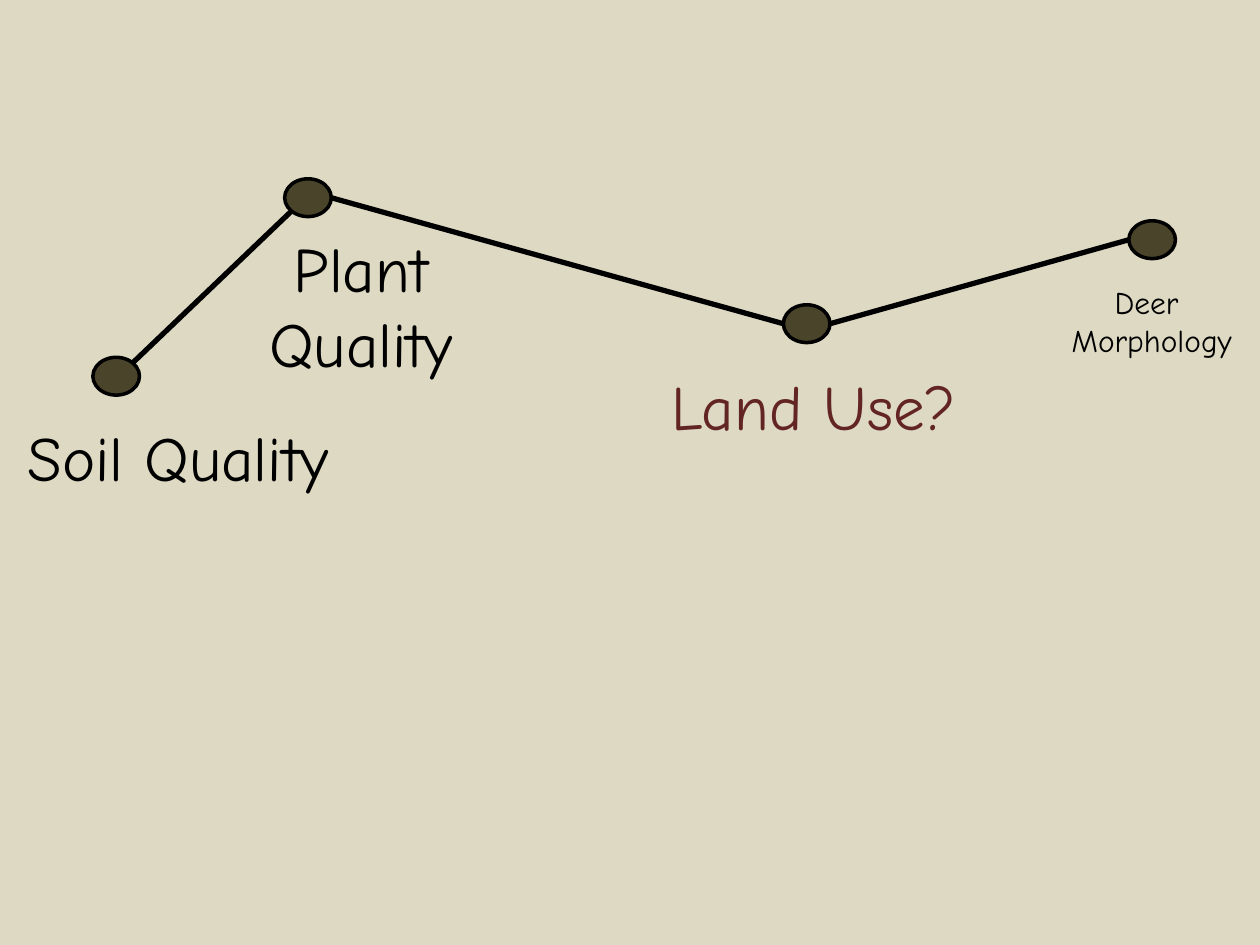
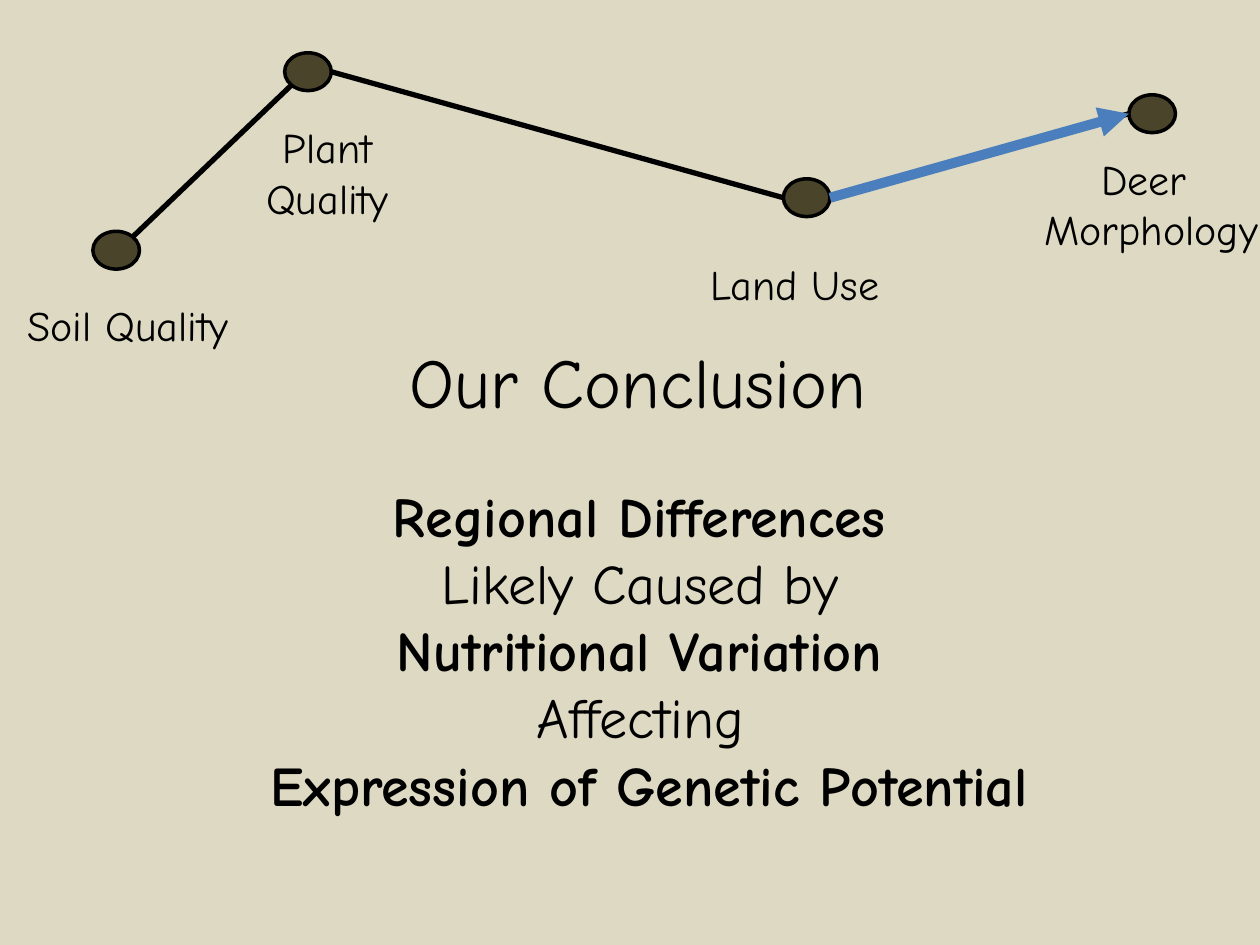
"""Build two slides that trace soil, plants and land use to deer morphology."""
from itertools import pairwise
from lxml.etree import SubElement
from pptx import Presentation as Deck
from pptx.dml.color import RGBColor as Color
from pptx.enum.shapes import MSO_CONNECTOR as Link, MSO_SHAPE as Kind
from pptx.enum.text import MSO_ANCHOR as Anchor, MSO_AUTO_SIZE as Fit, PP_ALIGN as Align
from pptx.oxml.ns import qn
from pptx.util import Pt

THEME = {
    "font": "Comic Neue",
    "back": "DDD9C3", "ink": "000000", "node": "4A452A", "warn": "632523", "arrow": "4B7EBC",
    "small": 18, "label": 24, "body": 32, "large": 36, "title": 40,
    "rim": 2, "line": 3, "thick": 5.75,
}
SIZE = (720, 540)
NODE = (26.64, 21.6)
PAD = 7.2
PITCH = 1.2
RISE = 72

NODES = {"soil": (66.4, 215), "plant": (176, 113), "land": (461, 185), "deer": (658.4, 137)}
DIAG = 0.71
SIDES = {
    ("soil", "plant"): ((DIAG, -DIAG), (-DIAG, DIAG)),
    ("plant", "land"): ((1, 0), (-1, 0)),
    ("land", "deer"): ((1, 0), (-1, 0)),
}

FIRST = [
    (["Soil Quality"], 8.6, 235.4, 215.3, "large", "ink"),
    (["Deer ", "Morphology"], 602, 158.4, 112.3, "small", "ink"),
    (["Land Use?"], 376.6, 206.6, 188, "large", "warn"),
    (["Plant", "Quality"], 136.1, 127.4, 140.4, "large", "ink"),
]
SECOND = [
    (["Soil Quality"], 8.6, 167.8, 148.3, "label", "ink"),
    (["Deer ", "Morphology"], 585.4, 84.2, 144.7, "label", "ink"),
    (["Land Use"], 398.9, 144, 117.4, "label", "ink"),
    (["Plant", "Quality"], 138.2, 66.2, 97.9, "label", "ink"),
]
HEAD = ["Our Conclusion "]
POINTS = [
    "Regional Differences ",
    "Likely Caused by ",
    "Nutritional Variation ",
    "Affecting ",
    "Expression of Genetic Potential",
]
HEAD_BOX = (53.3, 190, 635.8, 56)
BODY_BOX = (53.3, 271.4, 635.8, 226)


def tint(name):
    return Color.from_string(THEME[name])


def apply(item, values):
    for key, value in values.items():
        setattr(item, key, value)


def place(shape, box):
    apply(shape, dict(zip(("left", "top", "width", "height"), map(Pt, box))))


def write(frame, lines, size, hue="ink", align=Align.CENTER, bold=lambda row: False):
    for row, line in enumerate(lines):
        para = frame.paragraphs[0] if row == 0 else frame.add_paragraph()
        apply(para, {"alignment": align, "space_before": Pt(0)})
        run = para.add_run()
        apply(run, {"text": line})
        apply(run.font, {"name": THEME["font"], "size": Pt(THEME[size]), "bold": bold(row)})
        run.font.color.rgb = tint(hue)


def add_node(group, spot):
    wide, high = NODE
    node = group.shapes.add_shape(Kind.FLOWCHART_CONNECTOR, 0, 0, 0, 0)
    place(node, (spot[0] - wide / 2, spot[1] - high / 2, wide, high))
    node.shadow.inherit = False
    node.fill.solid()
    node.fill.fore_color.rgb = tint("node")
    node.line.color.rgb = tint("ink")
    node.line.width = Pt(THEME["rim"])


def add_link(shapes, spots, pair, hue="ink", weight="line"):
    ends = [
        Pt(spots[name][axis] + side[axis] * NODE[axis] / 2)
        for name, side in zip(pair, SIDES[pair])
        for axis in (0, 1)
    ]
    link = shapes.add_connector(Link.STRAIGHT, *ends)
    link.line.color.rgb = tint(hue)
    link.line.width = Pt(THEME[weight])
    SubElement(link._element.spPr, qn("a:effectLst"))
    return link


def add_chain(slide, labels, rise=0):
    spots = {name: (x, y - rise) for name, (x, y) in NODES.items()}
    group = slide.shapes.add_group_shape()
    for pair in pairwise(NODES):
        add_link(group.shapes, spots, pair)
    for spot in spots.values():
        add_node(group, spot)
    for lines, left, top, wide, size, hue in labels:
        high = PAD + PITCH * THEME[size] * len(lines)
        frame = slide.shapes.add_textbox(*map(Pt, (left, top, wide, high))).text_frame
        apply(frame, {"word_wrap": False, "auto_size": Fit.SHAPE_TO_FIT_TEXT})
        write(frame, lines, size, hue, Align.CENTER if len(lines) > 1 else Align.LEFT)
    return spots


def fill_holder(holder, box, lines, size, **style):
    place(holder, box)
    frame = holder.text_frame
    apply(frame, {"word_wrap": True, "auto_size": Fit.NONE, "vertical_anchor": Anchor.TOP})
    write(frame, lines, size, **style)
    for para in frame.paragraphs:
        props = para._p.get_or_add_pPr()
        props.set("marL", "0")
        props.set("indent", "0")
        SubElement(props, qn("a:buNone"))


def main():
    deck = Deck()
    apply(deck, dict(zip(("slide_width", "slide_height"), map(Pt, SIZE))))
    back = deck.slide_master.background.fill
    back.solid()
    back.fore_color.rgb = tint("back")

    add_chain(deck.slides.add_slide(deck.slide_layouts[6]), FIRST)

    slide = deck.slides.add_slide(deck.slide_layouts[1])
    spots = add_chain(slide, SECOND, RISE)
    fill_holder(slide.shapes.title, HEAD_BOX, HEAD, "title")
    fill_holder(slide.placeholders[1], BODY_BOX, POINTS, "body", bold=lambda row: row % 2 == 0)
    arrow = add_link(slide.shapes, spots, ("land", "deer"), "arrow", "thick")
    SubElement(arrow.line._get_or_add_ln(), qn("a:tailEnd"), type="triangle")

    deck.save("out.pptx")


if __name__ == "__main__":
    main()
